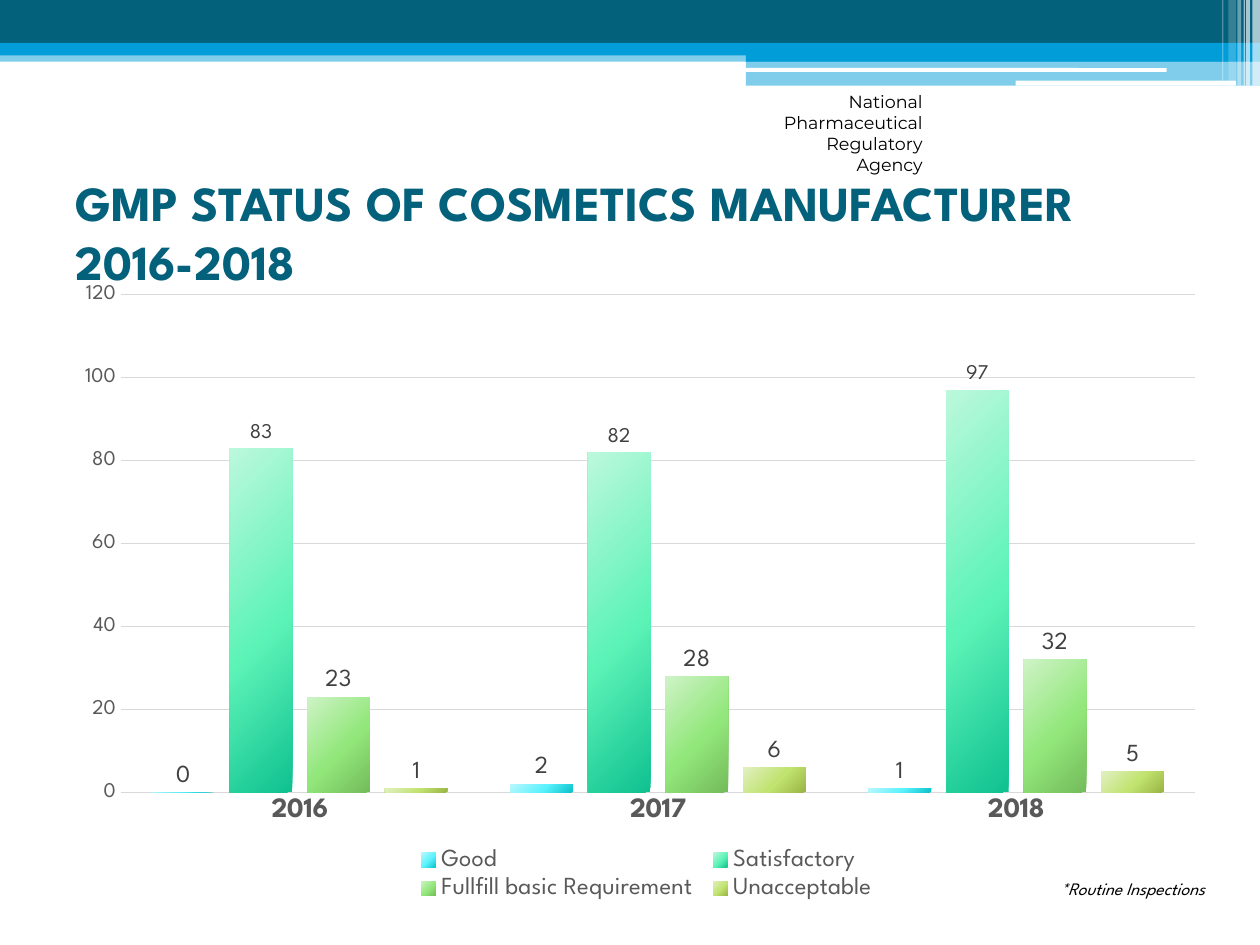
from lxml import etree
from pptx import Presentation
from pptx.chart.data import CategoryChartData
from pptx.dml.color import RGBColor
from pptx.enum.chart import XL_CHART_TYPE, XL_LABEL_POSITION, XL_LEGEND_POSITION, XL_TICK_MARK
from pptx.enum.shapes import MSO_SHAPE
from pptx.enum.text import MSO_ANCHOR, MSO_AUTO_SIZE, PP_ALIGN
from pptx.oxml.ns import qn
from pptx.util import Inches, Pt

COLUMNS = XL_CHART_TYPE.COLUMN_CLUSTERED
OUTSIDE = XL_LABEL_POSITION.OUTSIDE_END
BOTTOM = XL_LEGEND_POSITION.BOTTOM
NO_TICK = XL_TICK_MARK.NONE
RECT, ROUNDED = MSO_SHAPE.RECTANGLE, MSO_SHAPE.ROUNDED_RECTANGLE
TOP, MIDDLE = MSO_ANCHOR.TOP, MSO_ANCHOR.MIDDLE
LEFT, RIGHT = PP_ALIGN.LEFT, PP_ALIGN.RIGHT
GROW = MSO_AUTO_SIZE.SHAPE_TO_FIT_TEXT

WIDTH, HEIGHT = 10, 7.5
TEAL, BLUE, WHITE, BLACK = "04617B", "009DD9", "FFFFFF", "000000"
GRAY, DARK, RULE = "595959", "404040", "D9D9D9"
HEADING = "League Spartan"
TAB_LEFT = 5.92

BANDS = [
    (RECT, 0, 0.4, WIDTH, 0.09, BLUE, 50),
    (RECT, 0, 0, WIDTH, 0.34, TEAL, 100),
    (RECT, 0, 0.34, WIDTH, 0.1, BLUE, 100),
    (RECT, TAB_LEFT, 0.39, WIDTH - TAB_LEFT, 0.1, BLUE, 100),
    (RECT, TAB_LEFT, 0.48, WIDTH - TAB_LEFT, 0.2, BLUE, 50),
    (ROUNDED, 5.91, 0.54, 3.35, 0.03, WHITE, 100),
    (ROUNDED, 8.06, 0.64, 1.75, 0.04, WHITE, 100),
]
STRIPES = [
    (9.94, 0.06, 0.68, 65),
    (9.89, 0.03, 0.68, 65),
    (9.87, 0.01, 0.68, 60),
    (9.82, 0.03, 0.68, 40),
    (9.75, 0.06, 0.64, 20),
    (9.7, 0.01, 0.64, 30),
]
TEXTS = [
    {"box": (5.75, 0.67, 1.67, 0.5), "anchor": TOP, "align": RIGHT, "grow": False,
     "lines": ["National", "Pharmaceutical Regulatory", "Agency"],
     "font": {"size": 10, "name": "Montserrat", "color": BLACK}},
    {"box": (0.5, 1.25, 9, 1.17), "anchor": MIDDLE, "align": LEFT, "grow": False,
     "lines": ["GMP STATUS OF COSMETICS MANUFACTURER 2016-2018"],
     "font": {"size": 28, "name": HEADING, "color": TEAL, "bold": True}},
    {"box": (6.33, 6.92, 3.33, 0.27), "anchor": TOP, "align": RIGHT, "grow": True,
     "lines": ["*Routine Inspections"],
     "font": {"size": 10, "name": HEADING, "color": BLACK, "italic": True}},
]
YEARS = ["2016", "2017", "2018"]
STATUSES = [
    ("Good", (0, 2, 1), ("BBF7FD", "59F2FD", "0AC2CA"), 14),
    ("Satisfactory", (83, 82, 97), ("BCF8DC", "5CF3B7", "0FC190"), 12),
    ("Fullfill basic Requirement", (23, 28, 32), ("CEF3C6", "92E77B", "74BC5B"), 14),
    ("Unacceptable", (1, 6, 5), ("E1F0C2", "C1E36F", "9AB544"), 14),
]
GRADIENT_STOPS = (0, 55, 100)
GRADIENT_FOCUS = {"l": -40, "t": -90, "r": 140, "b": 190}
CHART_BOX = (0.5, 2.19, 9.17, 5)
PLOT_SHARE = {"x": 0.05, "y": 0.03, "w": 0.93, "h": 0.79}
LEGEND_SHARE = {"x": 0.3, "y": 0.9, "w": 0.41, "h": 0.1}


def rgb(code):
    return RGBColor.from_string(code)


def inches(values):
    return [Inches(value) for value in values]


def style_font(font, size, color, **values):
    font.size = Pt(size)
    font.color.rgb = rgb(color)
    for key, value in values.items():
        setattr(font, key, value)


def child(parent, tag, **attributes):
    return etree.SubElement(parent, qn(tag), {k: str(v) for k, v in attributes.items()})


def add_band(slide, kind, left, top, width, height, color, opacity):
    band = slide.shapes.add_shape(kind, *inches((left, top, width, height)))
    band.shadow.inherit = False
    band.line.fill.background()
    band.fill.solid()
    band.fill.fore_color.rgb = rgb(color)
    if opacity < 100:
        solid = band.fill._xPr.find(qn("a:solidFill"))
        child(solid[0], "a:alpha", val=opacity * 1000)


def add_text(slide, box, anchor, align, grow, lines, font):
    frame = slide.shapes.add_textbox(*inches(box)).text_frame
    frame.word_wrap = True
    frame.vertical_anchor = anchor
    if grow:
        frame.auto_size = GROW
    frame.text = "\n".join(lines)
    for paragraph in frame.paragraphs:
        paragraph.alignment = align
        style_font(paragraph.runs[0].font, **font)


def fill_gradient(series, colors):
    series.format.line.fill.background()
    properties = series._element.find(qn("c:spPr"))
    gradient = etree.Element(qn("a:gradFill"), rotWithShape="1")
    stops = child(gradient, "a:gsLst")
    for position, color in zip(GRADIENT_STOPS, colors):
        child(child(stops, "a:gs", pos=position * 1000), "a:srgbClr", val=color)
    focus = {side: share * 1000 for side, share in GRADIENT_FOCUS.items()}
    child(child(gradient, "a:path", path="circle"), "a:fillToRect", **focus)
    properties.insert(0, gradient)


def place(part, index, shares, inner=False):
    for old in part.findall(qn("c:layout")):
        part.remove(old)
    layout = etree.Element(qn("c:layout"))
    manual = child(layout, "c:manualLayout")
    if inner:
        child(manual, "c:layoutTarget", val="inner")
    for key in "xy":
        child(manual, f"c:{key}Mode", val="edge")
    for key, share in shares.items():
        child(manual, f"c:{key}", val=share)
    part.insert(index, layout)


def add_status_chart(slide):
    data = CategoryChartData()
    data.categories = YEARS
    for name, counts, _, _ in STATUSES:
        data.add_series(name, counts)
    chart = slide.shapes.add_chart(COLUMNS, *inches(CHART_BOX), data).chart
    chart.has_title = False
    style_font(chart.font, 10, BLACK, name=HEADING)

    years, counts_axis = chart.category_axis, chart.value_axis
    for axis, size, bold in ((years, 16, True), (counts_axis, 12, False)):
        axis.major_tick_mark = axis.minor_tick_mark = NO_TICK
        style_font(axis.tick_labels.font, size, GRAY, name=HEADING, bold=bold)
    counts_axis.minimum_scale, counts_axis.maximum_scale = 0, 120
    counts_axis.major_unit = 20
    counts_axis.format.line.fill.background()
    for line, width in ((years.format.line, 1), (counts_axis.major_gridlines.format.line, 0.75)):
        line.color.rgb = rgb(RULE)
        line.width = Pt(width)

    plot = chart.plots[0]
    plot.vary_by_categories = False
    plot.gap_width, plot.overlap = 100, -24
    for series, (_, _, colors, label_size) in zip(plot.series, STATUSES):
        fill_gradient(series, colors)
        labels = series.data_labels
        labels.show_value = True
        labels.position = OUTSIDE
        style_font(labels.font, label_size, DARK, name=HEADING)

    chart.has_legend = True
    chart.legend.position = BOTTOM
    chart.legend.include_in_layout = False
    style_font(chart.legend.font, 14, GRAY, name=HEADING)
    place(chart.legend._element, 1, LEGEND_SHARE)
    place(chart._chartSpace.chart.plotArea, 0, PLOT_SHARE, inner=True)


def main():
    deck = Presentation()
    deck.slide_width, deck.slide_height = inches((WIDTH, HEIGHT))
    slide = deck.slides.add_slide(deck.slide_layouts[6])
    for band in BANDS:
        add_band(slide, *band)
    for left, width, height, opacity in STRIPES:
        add_band(slide, RECT, left, 0, width, height, WHITE, opacity)
    agency, title, footnote = TEXTS
    add_text(slide, **agency)
    add_text(slide, **title)
    add_status_chart(slide)
    add_text(slide, **footnote)
    deck.save("out.pptx")


if __name__ == "__main__":
    main()
